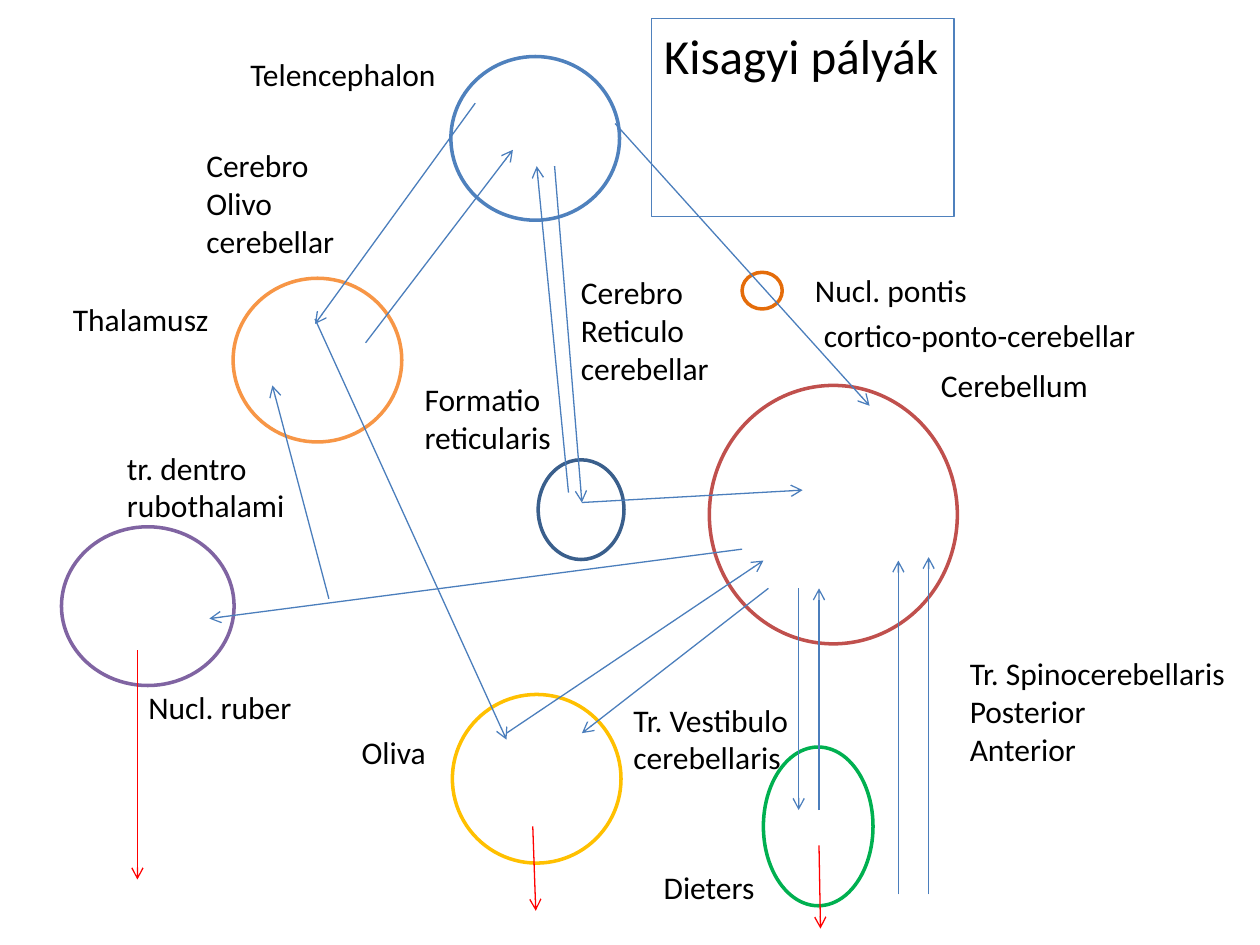
import pptx
import pptx.dml.color
import pptx.enum.shapes
import pptx.enum.text
import pptx.oxml.ns
import pptx.util
from lxml import etree

Cm = pptx.util.Cm
Pt = pptx.util.Pt
RGBColor = pptx.dml.color.RGBColor
FONT = "Calibri"

BLACK = RGBColor(0x00, 0x00, 0x00)
BLUE = RGBColor(0x4F, 0x81, 0xBD)
STEEL = RGBColor(0x4B, 0x7E, 0xBC)
NAVY = RGBColor(0x3A, 0x5F, 0x8C)
RED = RGBColor(0xFF, 0x00, 0x00)
BRICK = RGBColor(0xC0, 0x50, 0x4D)
GREEN = RGBColor(0x00, 0xB0, 0x50)
GOLD = RGBColor(0xFF, 0xC0, 0x00)
PURPLE = RGBColor(0x80, 0x64, 0xA2)
ORANGE = RGBColor(0xF7, 0x96, 0x46)
AMBER = RGBColor(0xE4, 0x6C, 0x0A)

# Brain regions: left, top, width, height in cm, outline
NUCLEI = [
    (14.3, 7.77, 5, 5.21, BRICK),       # cerebellum
    (15.39, 15.06, 2.21, 3.2, GREEN),   # Dieters
    (9.12, 14, 3.4, 3.4, GOLD),         # oliva
    (1.24, 10.62, 3.48, 3.2, PURPLE),   # nucl. ruber
    (4.7, 5.61, 3.4, 3.3, ORANGE),      # thalamus
    (9.09, 1.14, 3.4, 3.3, BLUE),       # telencephalon
    (14.96, 5.49, 0.81, 0.74, AMBER),   # nucl. pontis
    (10.85, 9.27, 1.73, 2.01, NAVY),    # formatio reticularis
]

# Labels: left, top, width in cm, lines
LABELS = [
    (13.13, 17.37, 2.36, ["Dieters"]),
    (12.52, 14, 3.66, ["Tr. Vestibulo", "cerebellaris"]),
    (18.72, 7.26, 3.51, ["Cerebellum"]),
    (7.04, 14.66, 1.83, ["Oliva"]),
    (2.74, 13.74, 3.43, ["Nucl. ruber"]),
    (19.3, 13.06, 5.87, ["Tr. Spinocerebellaris", "Posterior", "Anterior"]),
    (2.31, 8.92, 3.73, ["tr. dentro", "rubothalami"]),
    (1.22, 5.92, 3.28, ["Thalamusz"]),
    (4.8, 0.99, 4.29, ["Telencephalon"]),
    (3.91, 2.82, 3.12, ["Cerebro", "Olivo", "cerebellar"]),
    (16.36, 6.25, 6.86, ["cortico-ponto-cerebellar"]),
    (16.18, 5.33, 3.61, ["Nucl. pontis"]),
    (8.31, 7.54, 3.43, ["Formatio", "reticularis"]),
    (11.46, 5.38, 3.12, ["Cerebro", "Reticulo", "cerebellar"]),
]

# Tracts: start x, y and end x, y in cm
TRACTS = [
    (16.51, 16.33, 16.51, 11.86),   # Dieters and cerebellum
    (16.1, 11.86, 16.1, 16.33),
    (10.21, 14.78, 15.39, 11.3),    # oliva and cerebellum
    (15.49, 11.86, 11.73, 14.78),
    (14.96, 11.07, 4.22, 12.47),    # cerebellum to ruber
    (18.72, 18.03, 18.72, 11.23),   # spinal cord to cerebellum
    (18.11, 18.03, 18.11, 11.3),
    (6.63, 12.07, 5.49, 7.77),      # to thalamus
    (9.58, 2.08, 6.35, 6.53),       # cortex to oliva
    (6.35, 6.43, 10.21, 14.91),
    (12.4, 2.49, 17.53, 8.18),      # cortex to cerebellum
    (11.18, 3.35, 11.73, 10.13),    # by way of formatio
    (11.73, 10.13, 16.18, 9.88),
    (7.37, 6.91, 10.34, 3.02),      # back to cortex
    (11.46, 9.93, 10.82, 3.35),
]
DESCENT = [
    (16.51, 17.04, 16.54, 18.72),
    (10.74, 16.66, 10.8, 18.36),
    (2.77, 13.11, 2.77, 17.73),
]


def write(frame, lines, size):
    frame.word_wrap = False
    frame.auto_size = pptx.enum.text.MSO_AUTO_SIZE.SHAPE_TO_FIT_TEXT
    frame.vertical_anchor = pptx.enum.text.MSO_ANCHOR.TOP
    for i, line in enumerate(lines):
        para = frame.paragraphs[0] if i == 0 else frame.add_paragraph()
        para.alignment = pptx.enum.text.PP_ALIGN.LEFT
        run = para.add_run()
        run.text = line
        run.font.name = FONT
        run.font.size = Pt(size)
        run.font.color.rgb = BLACK


def add_title(slide):
    box = slide.shapes.title
    box.left, box.top = Cm(13.13), Cm(0.38)
    box.width, box.height = Cm(6.1), Cm(1.45)
    box.line.color.rgb = BLUE
    box.line.width = Pt(0.75)
    write(box.text_frame, ["Kisagyi pályák"], 28)


def add_ring(slide, left, top, width, height, color):
    ring = slide.shapes.add_shape(
        pptx.enum.shapes.MSO_SHAPE.OVAL, Cm(left), Cm(top), Cm(width), Cm(height))
    ring.shadow.inherit = False
    ring.fill.background()
    ring.line.color.rgb = color
    ring.line.width = Pt(2)


def add_label(slide, left, top, width, lines):
    height = 0.25 + 0.77 * len(lines)
    box = slide.shapes.add_textbox(Cm(left), Cm(top), Cm(width), Cm(height))
    write(box.text_frame, lines, 18)


def add_arrow(slide, ends, color):
    arrow = slide.shapes.add_connector(
        pptx.enum.shapes.MSO_CONNECTOR.STRAIGHT, *(Cm(n) for n in ends))
    arrow.line.color.rgb = color
    arrow.line.width = Pt(0.75)
    tag = pptx.oxml.ns.qn
    tip = etree.SubElement(arrow.line._get_or_add_ln(), tag("a:tailEnd"))
    tip.set("type", "arrow")
    etree.SubElement(arrow._element.spPr, tag("a:effectLst"))


def main():
    deck = pptx.Presentation()
    deck.slide_width, deck.slide_height = Cm(25.4), Cm(19.05)
    slide = deck.slides.add_slide(deck.slide_layouts[5])
    add_title(slide)
    for ring in NUCLEI:
        add_ring(slide, *ring)
    for label in LABELS:
        add_label(slide, *label)
    for color, group in ((STEEL, TRACTS), (RED, DESCENT)):
        for ends in group:
            add_arrow(slide, ends, color)
    deck.save("out.pptx")


if __name__ == "__main__":
    main()
